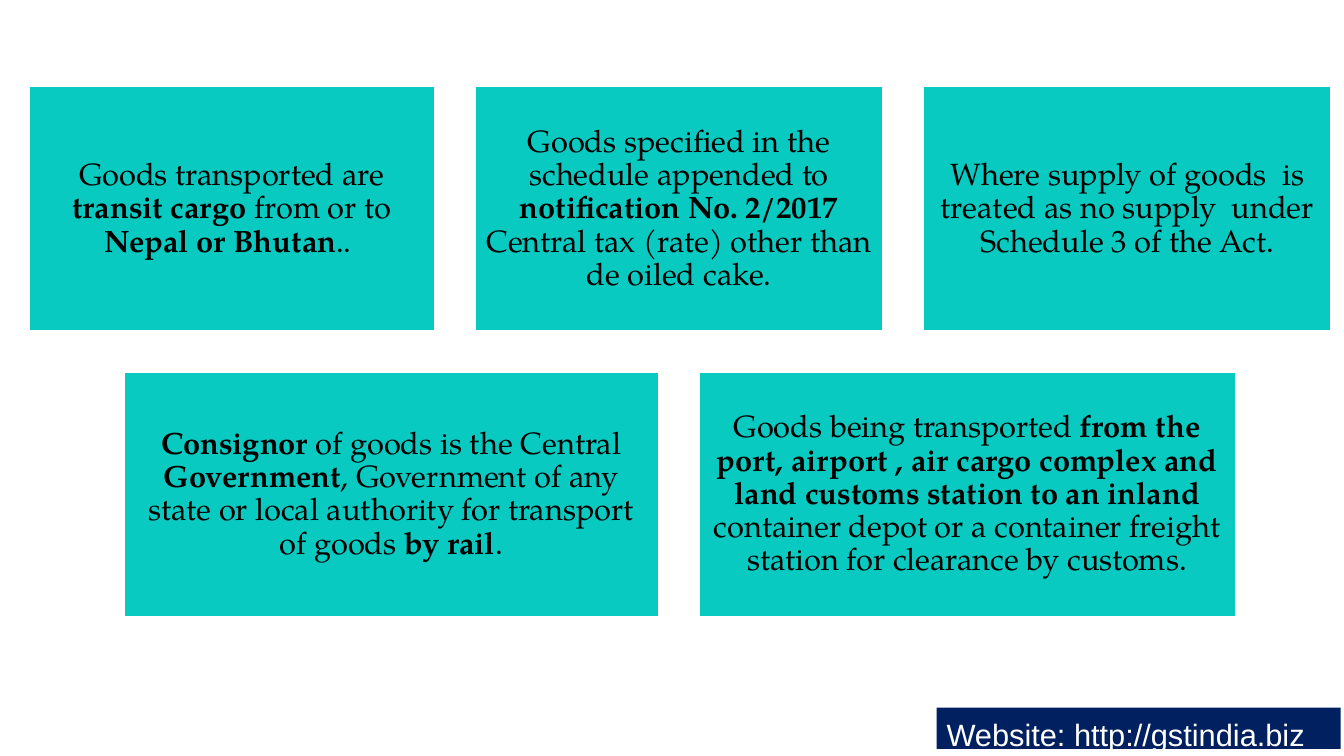
import pptx
import pptx.util
import pptx.dml.color
import pptx.enum.shapes
import pptx.enum.text

Pt = pptx.util.Pt
Rgb = pptx.dml.color.RGBColor
Align = pptx.enum.text.PP_ALIGN
Anchor = pptx.enum.text.MSO_ANCHOR

HUES = {"teal": "08CAC1", "navy": "002060", "white": "FFFFFF", "black": "000000"}
CARD = {"name": "TeX Gyre Pagella", "size": Pt(22)}
SITE = {"name": "Arial", "size": Pt(22)}
GAP = 29.2
HIGH = 174.8

# Each card is a list of runs: (text, bold)
TOP = [
    (289.5, [("Goods transported are ", False), ("transit cargo ", True),
             ("from or to ", False), ("Nepal or Bhutan", True), (".. ", False)]),
    (291, [("Goods specified in the schedule appended to ", False),
           ("notification No. 2/2017 ", True),
           ("Central tax (rate) other than de oiled cake.", False)]),
    (291, [("Where supply of goods  is treated as no supply  under "
            "Schedule 3 of the Act.", False)]),
]
LOW = [
    (381.6, [("Consignor ", True), ("of goods is the Central ", False),
             ("Government", True),
             (", Government of any state or local authority for transport of goods ",
              False),
             ("by rail", True), (".", False)]),
    (383, [("Goods being transported ", False),
           ("from the port, airport , air cargo complex and land customs station "
            "to an inland ", True),
           ("container depot or a container freight station for clearance by customs.",
            False)]),
]


def apply(item, form):
    for key, value in form.items():
        setattr(item, key, value)


def block(slide, box, fill, frame, para, font, hue, runs):
    """Draw a filled rectangle with one formatted paragraph."""
    shape = slide.shapes.add_shape(
        pptx.enum.shapes.MSO_SHAPE.RECTANGLE, *[Pt(v) for v in box])
    shape.shadow.inherit = False
    shape.fill.solid()
    shape.fill.fore_color.rgb = Rgb.from_string(HUES[fill])
    shape.line.fill.background()
    apply(shape.text_frame, {"word_wrap": True, **frame})
    line = shape.text_frame.paragraphs[0]
    apply(line, para)
    for text, bold in runs:
        run = line.add_run()
        run.text = text
        apply(run.font, {**font, "bold": bold})
        run.font.color.rgb = Rgb.from_string(HUES[hue])
    return shape


def row(slide, left, top, cards):
    """Place cards side by side with equal gaps."""
    inset = Pt(6.6)
    frame = {"vertical_anchor": Anchor.MIDDLE, "margin_left": inset,
             "margin_right": inset, "margin_top": inset, "margin_bottom": inset}
    para = {"alignment": Align.CENTER, "line_spacing": 0.9, "space_after": Pt(7.7)}
    for width, runs in cards:
        card = block(slide, (left, top, width, HIGH), "teal",
                     frame, para, CARD, "black", runs)
        card.line.color.rgb = Rgb.from_string(HUES["white"])
        card.line.width = Pt(1)
        left += width + GAP


def footer(slide, box):
    """Website label in the corner."""
    block(slide, box, "navy", {"vertical_anchor": Anchor.TOP},
          {"alignment": Align.LEFT, "line_spacing": 1.07}, SITE, "white",
          [("Website: http://gstindia.biz", False)])


def main():
    deck = pptx.Presentation()
    apply(deck, {"slide_width": Pt(960), "slide_height": Pt(540)})
    slide = deck.slides.add_slide(deck.slide_layouts[6])
    footer(slide, (669, 505.5, 288.7, 29.5))
    top = 61.7
    row(slide, 20.9, top, TOP)
    row(slide, 88.6, top + HIGH + GAP, LOW)
    deck.save("out.pptx")


if __name__ == "__main__":
    main()
